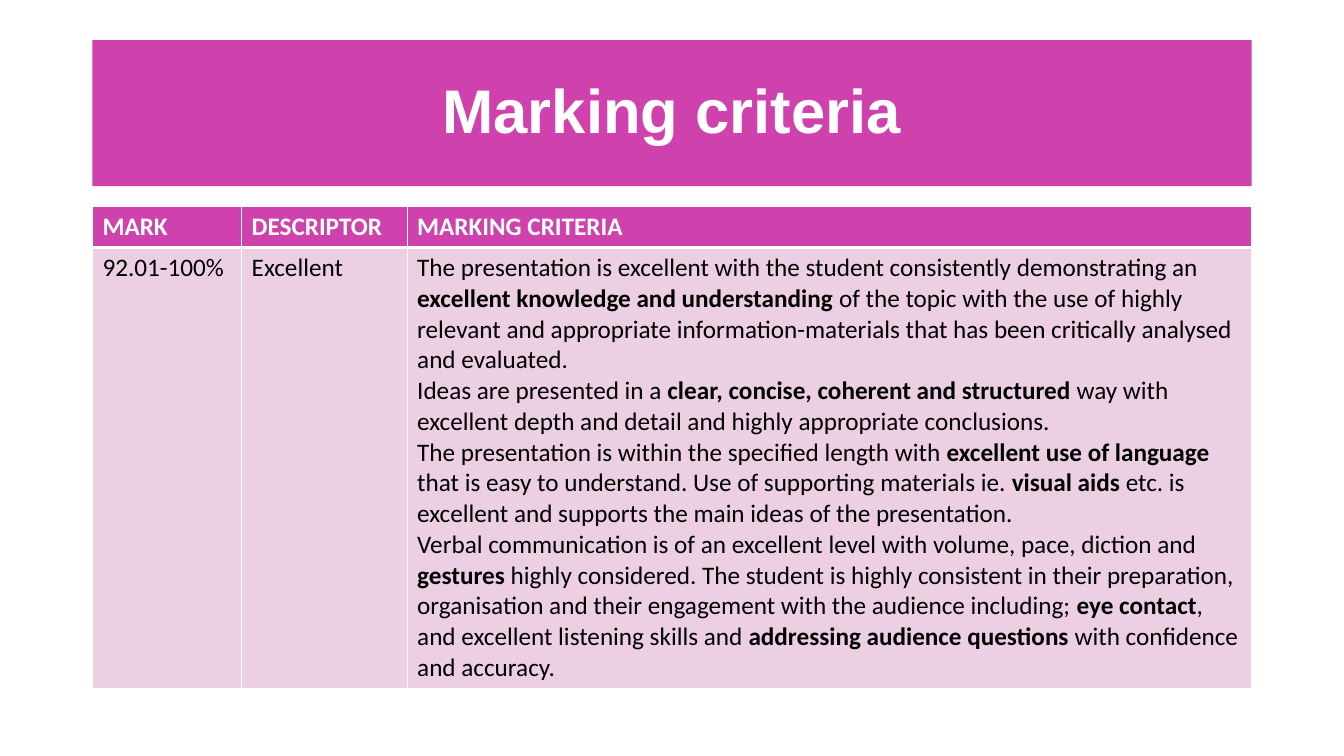
from dataclasses import dataclass

from lxml import etree
from pptx import Presentation
from pptx.dml.color import RGBColor
from pptx.enum.text import MSO_ANCHOR, MSO_AUTO_SIZE, PP_ALIGN
from pptx.oxml.ns import qn
from pptx.util import Cm, Pt

MIDDLE = MSO_ANCHOR.MIDDLE
NO_AUTOFIT = MSO_AUTO_SIZE.NONE
CENTER = PP_ALIGN.CENTER

COLORS = {"magenta": "CF41AD", "pale": "EDCFE3", "white": "FFFFFF", "black": "000000"}
LEFT, WIDTH = Cm(2.33), Cm(29.21)
THIN, THICK = Pt(1), Pt(3)
BOLD_MARK = "*"


@dataclass
class Column:
    heading: str
    width: float
    paragraphs: list[str]


@dataclass
class RowStyle:
    height: float
    fill: str
    color: str
    bold: bool
    top: int
    bottom: int


COLUMNS = [
    Column("MARK", 3.76, ["92.01-100%"]),
    Column("DESCRIPTOR", 4.17, ["Excellent"]),
    Column("MARKING CRITERIA", 21.28, [
        "The presentation is excellent with the student consistently demonstrating an "
        "*excellent knowledge and understanding *of the topic with the use of highly "
        "relevant and appropriate information-materials that has been critically "
        "analysed and evaluated.",
        "Ideas are presented in a *clear, concise, coherent and structured *way with "
        "excellent depth and detail and highly appropriate conclusions.",
        "The presentation is within the specified length with *excellent use of "
        "language *that is easy to understand. Use of supporting materials ie. "
        "*visual aids *etc. is excellent and supports the main ideas of the "
        "presentation.",
        "Verbal communication is of an excellent level with volume, pace, diction and "
        "*gestures* highly considered. The student is highly consistent in their "
        "preparation, organisation and their engagement with the audience including; "
        "*eye contact*, and excellent listening skills and *addressing audience "
        "questions *with confidence and accuracy.",
    ]),
]
HEADER = RowStyle(1.03, "magenta", "white", True, THIN, THICK)
BODY = RowStyle(10.93, "pale", "black", False, THICK, THIN)


def rgb(name: str) -> RGBColor:
    return RGBColor.from_string(COLORS[name])


def set_borders(cell, style: RowStyle) -> None:
    tc_pr = cell._tc.get_or_add_tcPr()
    widths = {"a:lnL": THIN, "a:lnR": THIN, "a:lnT": style.top, "a:lnB": style.bottom}
    for tag, width in widths.items():
        ln = etree.SubElement(tc_pr, qn(tag), w=str(int(width)))
        fill = etree.SubElement(ln, qn("a:solidFill"))
        etree.SubElement(fill, qn("a:srgbClr"), val=COLORS["white"])


def fill_cell(cell, paragraphs: list[str], style: RowStyle) -> None:
    set_borders(cell, style)
    cell.fill.solid()
    cell.fill.fore_color.rgb = rgb(style.fill)
    tf = cell.text_frame
    for i, text in enumerate(paragraphs):
        p = tf.add_paragraph() if i else tf.paragraphs[0]
        for j, part in enumerate(text.split(BOLD_MARK)):
            r = p.add_run()
            r.text = part
            r.font.name = "Calibri"
            r.font.size = Pt(18)
            r.font.bold = style.bold or j % 2 == 1
            r.font.color.rgb = rgb(style.color)


def add_title(s, text: str) -> None:
    sp = s.shapes.title
    sp.left, sp.top, sp.width, sp.height = LEFT, Cm(1.01), WIDTH, Cm(3.68)
    sp.fill.solid()
    sp.fill.fore_color.rgb = rgb("magenta")
    tf = sp.text_frame
    tf.text = text
    tf.auto_size = NO_AUTOFIT
    tf.vertical_anchor = MIDDLE
    p = tf.paragraphs[0]
    p.alignment = CENTER
    p.line_spacing = 0.9
    font = p.runs[0].font
    font.name = "Arial"
    font.size = Pt(44)
    font.bold = True
    font.color.rgb = rgb("white")


def add_criteria_table(s) -> None:
    styles = [HEADER, BODY]
    height = Cm(sum(style.height for style in styles))
    table = s.shapes.add_table(
        len(styles), len(COLUMNS), LEFT, Cm(5.21), WIDTH, height).table
    for row, style in zip(table.rows, styles):
        row.height = Cm(style.height)
    for i, column in enumerate(COLUMNS):
        table.columns[i].width = Cm(column.width)
        fill_cell(table.cell(0, i), [column.heading], HEADER)
        fill_cell(table.cell(1, i), column.paragraphs, BODY)


def main() -> None:
    prs = Presentation()
    prs.slide_width, prs.slide_height = Cm(33.87), Cm(19.05)
    s = prs.slides.add_slide(prs.slide_layouts[5])
    add_title(s, "Marking criteria")
    add_criteria_table(s)
    prs.save("out.pptx")


if __name__ == "__main__":
    main()
